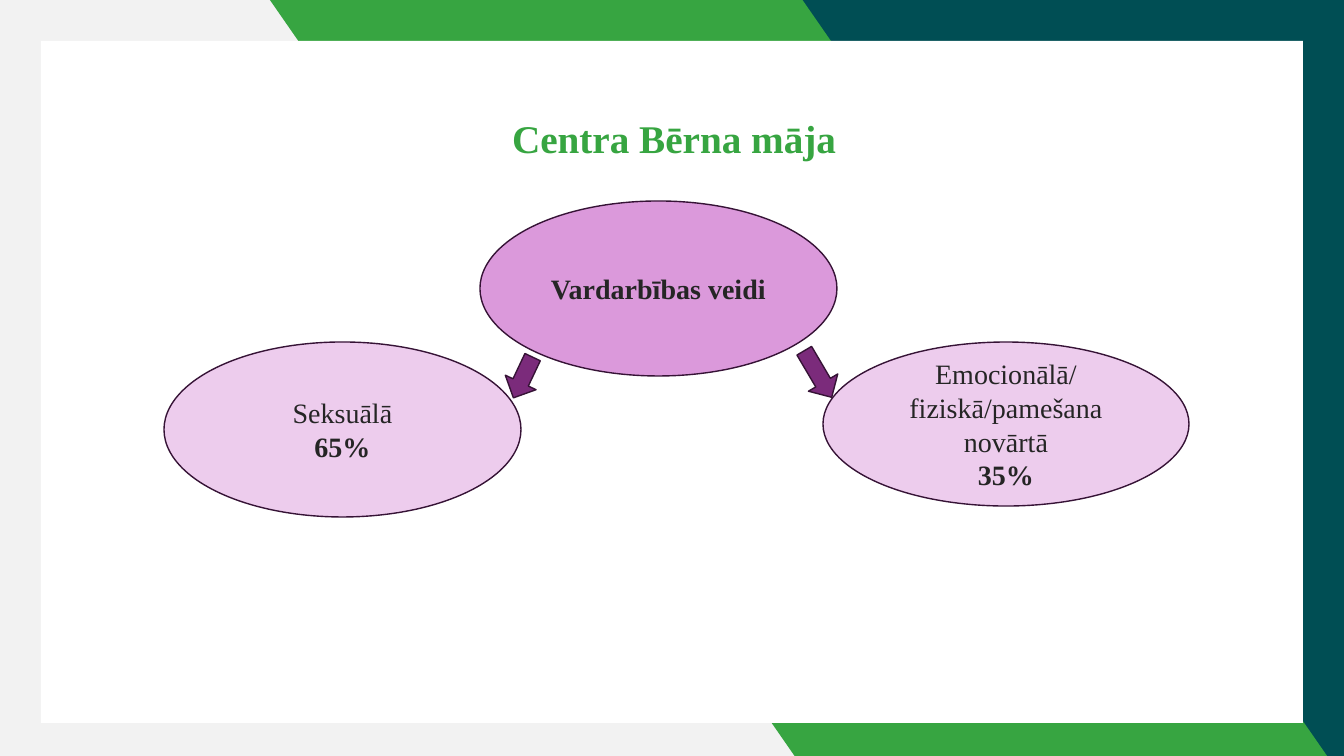
from pptx import Presentation
from pptx.dml.color import RGBColor
from pptx.enum.shapes import MSO_SHAPE as SHAPE
from pptx.enum.text import MSO_ANCHOR as ANCHOR, PP_ALIGN as ALIGN
from pptx.util import Emu, Pt

GREY = RGBColor(0xF2, 0xF2, 0xF2)
TEAL = RGBColor(0x00, 0x4E, 0x54)
GREEN = RGBColor(0x37, 0xA5, 0x41)
WHITE = RGBColor(0xFF, 0xFF, 0xFF)
ORCHID = RGBColor(0xDB, 0x99, 0xDB)
LILAC = RGBColor(0xED, 0xCC, 0xED)
PURPLE = RGBColor(0x7B, 0x2B, 0x7B)
OUTLINE = RGBColor(0x36, 0x13, 0x36)
INK = RGBColor(0x25, 0x25, 0x25)
FONT = "Times New Roman"
WIDTH, HEIGHT = 1344, 756


def px(n):
    return Emu(round(n * 914400 / 100.8))


def add_filled(s, kind, box, fill, line=None):
    sp = s.shapes.add_shape(kind, *map(px, box))
    sp.shadow.inherit = False
    sp.fill.solid()
    sp.fill.fore_color.rgb = fill
    if line is None:
        sp.line.fill.background()
    else:
        sp.line.color.rgb = line
        sp.line.width = Pt(1)
    return sp


def write_line(p, text, size, color, bold):
    p.text = text
    p.alignment = ALIGN.CENTER
    font = p.runs[0].font
    font.name, font.size, font.bold = FONT, Pt(size), bold
    font.color.rgb = color


def add_title(s, text, box):
    tf = s.shapes.add_textbox(*map(px, box)).text_frame
    tf.word_wrap = True
    write_line(tf.paragraphs[0], text, 28, GREEN, True)


def add_oval(s, lines, box, fill):
    """The last line of each oval is bold."""
    tf = add_filled(s, SHAPE.OVAL, box, fill, OUTLINE).text_frame
    tf.word_wrap = True
    tf.vertical_anchor = ANCHOR.MIDDLE
    tf.text = "\n".join(lines)
    for p, line in zip(tf.paragraphs, lines):
        write_line(p, line, 20, INK, line == lines[-1])


def add_arrow(s, box, angle):
    sp = add_filled(s, SHAPE.DOWN_ARROW, box, PURPLE, OUTLINE)
    sp.rotation = angle


def add_backdrop(s):
    add_filled(s, SHAPE.RECTANGLE, (0, 0, WIDTH, 760), GREY)
    add_filled(s, SHAPE.RECTANGLE, (800, 0, WIDTH - 800, 760), TEAL)
    band = add_filled(s, SHAPE.PARALLELOGRAM, (270, 0, 1060, 760), GREEN)
    band.adjustments[0] = 0.694
    band._element.spPr.xfrm.set("flipH", "1")
    margin = 41
    panel = (margin, margin, WIDTH - 2 * margin, 682)
    add_filled(s, SHAPE.RECTANGLE, panel, WHITE)


def main():
    prs = Presentation()
    prs.slide_width, prs.slide_height = px(WIDTH), px(HEIGHT)
    s = prs.slides.add_slide(prs.slide_layouts[6])

    # Backdrop and title
    add_backdrop(s)
    add_title(s, "Centra Bērna māja", (65, 109, 1218, 57))

    # Topic and its two kinds
    add_oval(s, ["Vardarbības veidi"], (480, 201, 357, 175), ORCHID)
    add_oval(s, ["Seksuālā", "65%"], (164, 342, 357, 175), LILAC)
    add_oval(s, ["Emocionālā/", "fiziskā/pamešana novārtā", "35%"],
             (823, 342, 366, 164), LILAC)

    # Arrows from the topic to the kinds
    add_arrow(s, (506, 355, 34, 45), 25.3)
    add_arrow(s, (801, 347, 34, 54), 329.5)

    prs.save("out.pptx")


if __name__ == "__main__":
    main()
